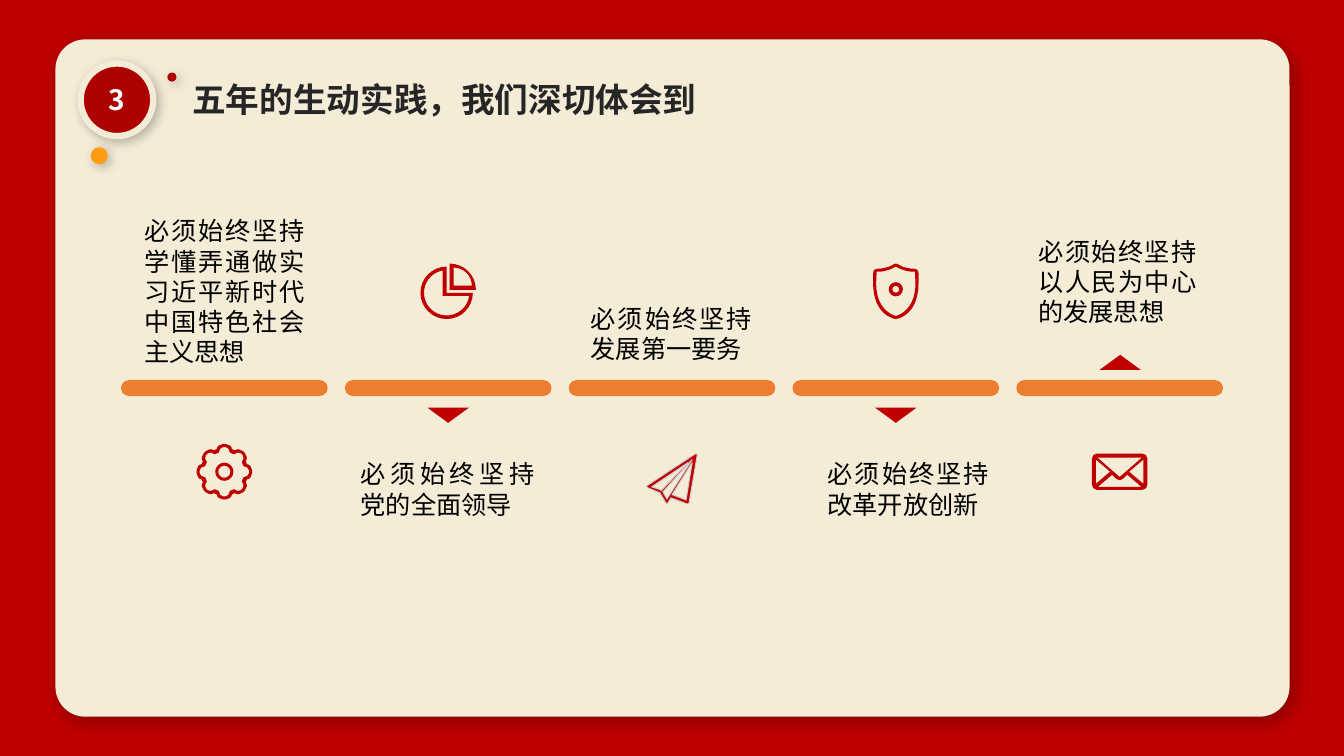
from dataclasses import dataclass
from math import cos, radians, sin, tan
from typing import Optional

from lxml import etree
from pptx import Presentation
from pptx.dml.color import RGBColor
from pptx.enum.shapes import MSO_SHAPE
from pptx.enum.text import MSO_ANCHOR, MSO_AUTO_SIZE, PP_ALIGN
from pptx.oxml.ns import qn
from pptx.util import Inches, Pt

RED = RGBColor(0xC0, 0x00, 0x00)
DARK_RED = RGBColor(0xAE, 0x02, 0x01)
CREAM = RGBColor(0xF4, 0xEC, 0xD7)
AMBER = RGBColor(0xFF, 0x9C, 0x11)
ORANGE = RGBColor(0xED, 0x7D, 0x31)
CHARCOAL = RGBColor(0x26, 0x26, 0x26)
BLACK = RGBColor(0x00, 0x00, 0x00)
WHITE = RGBColor(0xFF, 0xFF, 0xFF)
GREY = RGBColor(0xD0, 0xCE, 0xCE)
FONT = "Noto Sans CJK SC"
RECT = MSO_SHAPE.RECTANGLE
ROUND = MSO_SHAPE.ROUNDED_RECTANGLE
OVAL = MSO_SHAPE.OVAL
TRIANGLE = MSO_SHAPE.ISOSCELES_TRIANGLE
LEFT, CENTER, JUSTIFY = PP_ALIGN.LEFT, PP_ALIGN.CENTER, PP_ALIGN.JUSTIFY
MIDDLE = MSO_ANCHOR.MIDDLE
GROW = MSO_AUTO_SIZE.SHAPE_TO_FIT_TEXT

Contour = list[tuple[float, ...]]


@dataclass
class Shadow:
    alpha: int
    blur: int
    dist: int


@dataclass
class Step:
    text: str
    box: tuple[float, float, float, float]
    icon: list[Contour]
    icon_y: float
    icon_line: Optional[RGBColor] = None
    pointer: str = ""


def arc(cx: float, cy: float, r: float, start: int, end: int) -> Contour:
    n = -(-(end - start) // 90)
    step = radians((end - start) / n)
    k = 4 / 3 * tan(step / 4)
    out: Contour = [(cx + r * cos(radians(start)), cy + r * sin(radians(start)))]
    for i in range(n):
        a = radians(start) + i * step
        b = a + step
        out.append((cx + r * (cos(a) - k * sin(a)), cy + r * (sin(a) + k * cos(a)),
                    cx + r * (cos(b) + k * sin(b)), cy + r * (sin(b) - k * cos(b)),
                    cx + r * cos(b), cy + r * sin(b)))
    return out


def mirror(half: Contour) -> Contour:
    x, y = half[-1][-2:]
    out = half + ([(-x, y)] if x else [])
    for i in range(len(half) - 1, 0, -1):
        px, py = half[i - 1][-2:]
        controls = half[i][:-2]
        if controls:
            x1, y1, x2, y2 = controls
            out.append((-x2, y2, -x1, y1, -px, py))
        else:
            out.append((-px, py))
    return out


def rotate(seg: tuple[float, ...], a: float) -> tuple[float, ...]:
    pairs = zip(seg[::2], seg[1::2])
    return tuple(v for x, y in pairs
                 for v in (x * cos(a) - y * sin(a), x * sin(a) + y * cos(a)))


def cog(top: float, x: float, y: float) -> Contour:
    mid = (top + y) / 2
    tooth: Contour = [(-x, -y), (-x, -mid, -0.6 * x, -top, -0.015, -top),
                      (0.015, -top), (0.6 * x, -top, x, -mid, x, -y)]
    return [rotate(seg, radians(45 * i)) for i in range(8) for seg in tooth]


def ring(cy: float, outer: float, inner: float) -> list[Contour]:
    return [arc(0, cy, r, 0, 360) for r in (outer, inner)]


GEAR = [cog(0.275, 0.075, 0.225), cog(0.245, 0.055, 0.19)] + ring(0, 0.09, 0.06)
PIE = [
    arc(-0.015, 0.015, 0.26, 0, 270) + [(-0.015, 0.015)],
    arc(-0.015, 0.015, 0.225, 8, 260) + [(-0.055, 0.045)],
    arc(0.015, -0.015, 0.26, 270, 360) + [(0.015, -0.015)],
    arc(0.055, -0.055, 0.18, 270, 360) + [(0.055, -0.055)],
]
PLANE: list[Contour] = [
    [(0.24, -0.25), (0.22, -0.24), (-0.25, 0.07), (-0.25, 0.08), (-0.24, 0.09),
     (-0.12, 0.14), (-0.06, 0.24), (-0.05, 0.25), (-0.04, 0.24), (-0.01, 0.19),
     (0.15, 0.25), (0.16, 0.25), (0.17, 0.24), (0.25, -0.23), (0.25, -0.24)],
    [(0.14, 0.21), (0.01, 0.16), (0, 0.16), (0.2, -0.16)],
    [(-0.09, 0.13), (0.2, -0.19), (-0.05, 0.2)],
    [(-0.2, 0.08), (0.16, -0.16), (-0.11, 0.12), (-0.11, 0.11)],
]
SHIELD = [
    mirror([(0, -0.275), (0.02, -0.275, 0.06, -0.24, 0.1, -0.235),
            (0.13, -0.225, 0.16, -0.225, 0.18, -0.225),
            (0.2, -0.225, 0.225, -0.215, 0.225, -0.18),
            (0.225, -0.08), (0.225, 0.235, 0.015, 0.275, 0, 0.275)]),
    mirror([(0, -0.245), (0, -0.245, 0.05, -0.215, 0.095, -0.205),
            (0.125, -0.195, 0.155, -0.195, 0.19, -0.195),
            (0.195, -0.08), (0.195, 0.205, 0, 0.245, 0, 0.245)]),
] + ring(-0.02, 0.07, 0.035)
LEFT_FOLD: Contour = [(-0.235, 0.12), (-0.235, -0.12), (-0.095, 0)]
ENVELOPE = [
    mirror(arc(0.225, -0.13, 0.05, 270, 360) + arc(0.225, 0.13, 0.05, 0, 90)),
    mirror([(0.22, -0.14), (0.015, 0.04), (0, 0.05)]),
    LEFT_FOLD,
    [(-x, y) for x, y in LEFT_FOLD],
    mirror([(0.215, 0.15), (0.075, 0.03), (0.035, 0.07), (0, 0.085)]),
]
DOWN: list[Contour] = [[(-0.205, -0.075), (0.205, -0.075), (0, 0.075)]]

STEPS = [
    Step("必须始终坚持学懂弄通做实习近平新时代中国特色社会主义思想",
         (1.33, 2.09, 1.79, 1.61), GEAR, 4.68),
    Step("必须始终坚持党的全面领导", (3.48, 4.5, 1.92, 0.71), PIE, 2.89, pointer="down"),
    Step("必须始终坚持发展第一要务", (5.76, 2.96, 1.8, 0.71), PLANE, 4.75, GREY),
    Step("必须始终坚持改革开放创新", (8.11, 4.5, 1.8, 0.71), SHIELD, 2.89, pointer="down"),
    Step("必须始终坚持以人民为中心的发展思想",
         (10.2, 2.29, 1.77, 1.01), ENVELOPE, 4.68, pointer="up"),
]
BAR_LEFT, BAR_PITCH, BAR_WIDTH = 1.2, 2.22, 2.05

prs = Presentation()
prs.slide_width, prs.slide_height = Inches(13.33), Inches(7.5)
slide = prs.slides.add_slide(prs.slide_layouts[6])


def paint(sp, fill: RGBColor, line: Optional[RGBColor] = None, width: float = 0.75) -> None:
    sp.shadow.inherit = False
    sp.fill.solid()
    sp.fill.fore_color.rgb = fill
    if line is None:
        sp.line.fill.background()
    else:
        sp.line.color.rgb = line
        sp.line.width = Pt(width)


def add_preset(kind, box: tuple[float, float, float, float], fill: RGBColor,
               adj: Optional[float] = None, shadow: Optional[Shadow] = None,
               line: Optional[RGBColor] = None, width: float = 0.75):
    sp = slide.shapes.add_shape(kind, *map(Inches, box))
    paint(sp, fill, line, width)
    if adj is not None:
        sp.adjustments[0] = adj
    if shadow:
        effects = sp._element.spPr.find(qn("a:effectLst"))
        outer = etree.SubElement(effects, qn("a:outerShdw"), blurRad=str(Pt(shadow.blur)),
                                 dist=str(Pt(shadow.dist)), dir="2700000",
                                 algn="tl", rotWithShape="0")
        clr = etree.SubElement(outer, qn("a:srgbClr"), val="000000")
        etree.SubElement(clr, qn("a:alpha"), val=str(shadow.alpha * 1000))
    return sp


def add_outline(contours: list[Contour], cx: float, cy: float,
                line: Optional[RGBColor] = None) -> None:
    ends = [[(Inches(cx + s[-2]), Inches(cy + s[-1])) for s in c] for c in contours]
    fb = slide.shapes.build_freeform(*ends[0][0])
    for i, pts in enumerate(ends):
        if i:
            fb.move_to(*pts[0])
        fb.add_line_segments(pts[1:], close=True)
    sp = fb.convert_to_shape()
    paint(sp, RED, line)
    segments = [s for c in contours for s in c[1:]]
    for node, seg in zip(list(sp._element.iter(qn("a:lnTo"))), segments):
        if len(seg) == 6:
            node.tag = qn("a:cubicBezTo")
            for j in (0, 1):
                x, y = seg[2 * j:2 * j + 2]
                pt = etree.Element(qn("a:pt"), x=str(Inches(cx + x) - sp.left),
                                   y=str(Inches(cy + y) - sp.top))
                node.insert(j, pt)


def write(tf, text: str, size: float, color: RGBColor, bold: bool = False,
          align=LEFT, wrap: bool = True) -> None:
    tf.word_wrap = wrap
    p = tf.paragraphs[0]
    p.alignment = align
    p.line_spacing = Pt(size * 1.2)
    r = p.add_run()
    r.text = text
    r.font.name, r.font.size, r.font.bold = FONT, Pt(size), bold
    r.font.color.rgb = color
    etree.SubElement(r._r.get_or_add_rPr(), qn("a:ea"), typeface=FONT)


def add_text(text: str, box: tuple[float, float, float, float], **fmt) -> None:
    tf = slide.shapes.add_textbox(*map(Inches, box)).text_frame
    write(tf, text, **fmt)
    tf.auto_size = GROW


def add_step(i: int, step: Step) -> None:
    left = BAR_LEFT + i * BAR_PITCH
    cx = left + BAR_WIDTH / 2
    add_preset(ROUND, (left, 3.77, BAR_WIDTH, 0.16), ORANGE, adj=0.5)
    if step.pointer == "up":
        add_preset(TRIANGLE, (cx - 0.2, 3.52, 0.41, 0.15), RED)
    elif step.pointer == "down":
        add_outline(DOWN, cx, 4.12)
    add_outline(step.icon, cx, step.icon_y, step.icon_line)
    add_text(step.text, step.box, size=18, color=BLACK, align=JUSTIFY)


soft = Shadow(25, 8, 3)
add_preset(RECT, (0, 0, 13.33, 7.5), RED)
add_preset(ROUND, (0.55, 0.39, 12.24, 6.72), CREAM, 0.044, Shadow(30, 15, 5))
add_preset(OVAL, (0.9, 1.46, 0.17, 0.17), AMBER, shadow=soft)
add_preset(OVAL, (1.66, 0.72, 0.09, 0.09), DARK_RED, shadow=soft)
add_text("五年的生动实践，我们深切体会到", (1.81, 0.73, 5.5, 0.5),
         size=24, color=CHARCOAL, bold=True)
badge = add_preset(OVAL, (0.8, 0.63, 0.72, 0.72), DARK_RED,
                   shadow=soft, line=CREAM, width=4.5)
badge.text_frame.vertical_anchor = MIDDLE
write(badge.text_frame, "3", 20, WHITE, bold=True, align=CENTER, wrap=False)
for i, step in enumerate(STEPS):
    add_step(i, step)
prs.save("out.pptx")
